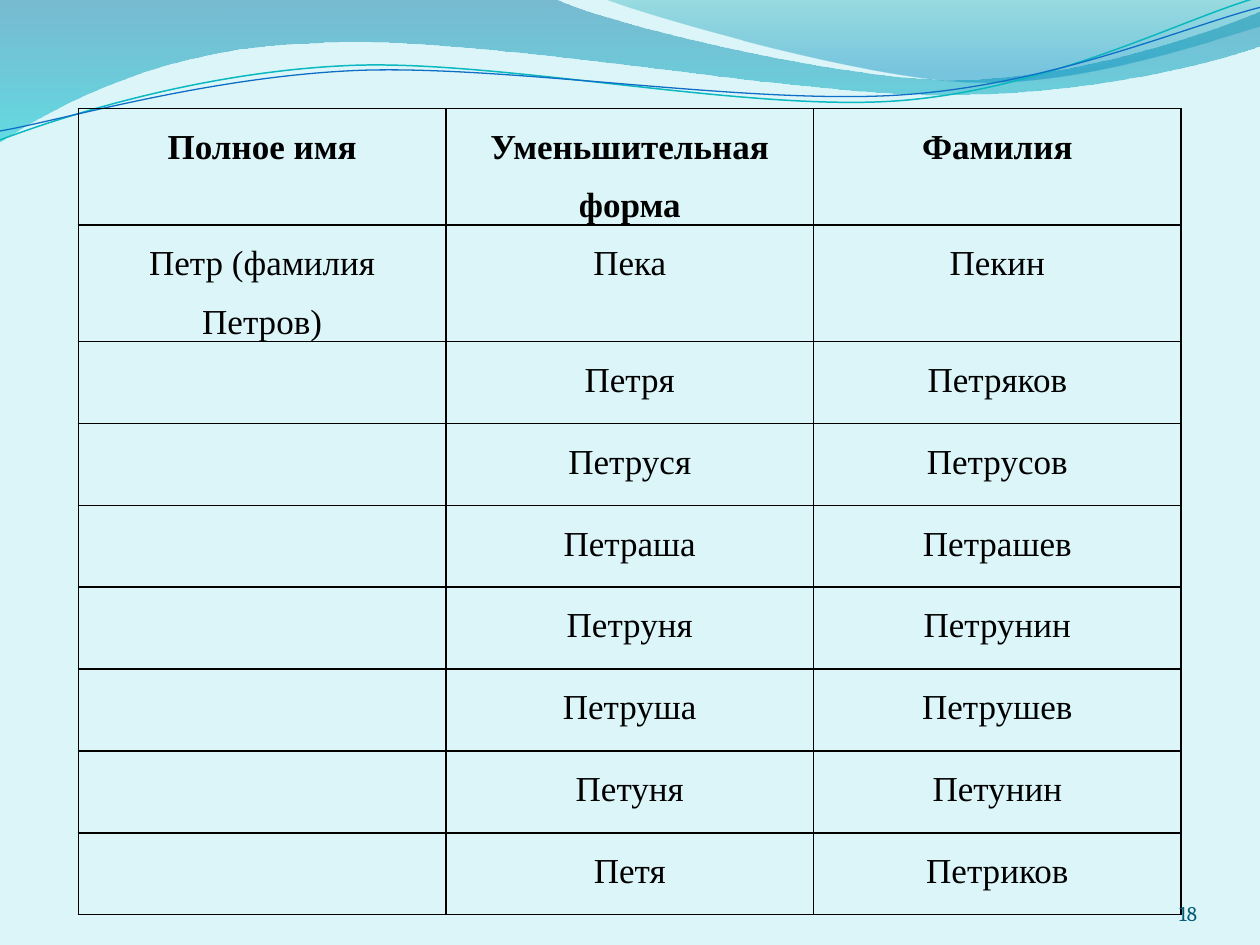
import math
from dataclasses import dataclass

from lxml import etree
from pptx import Presentation
from pptx import util as u
from pptx.dml.color import RGBColor
from pptx.enum import text as t
from pptx.oxml import ns


@dataclass(frozen=True)
class Theme:
    background: str = "DBF5F9"
    ink: str = "000000"
    number: str = "045D75"
    teal_line: str = "0AB8BF"
    blue_line: str = "0F6FC6"
    # Gradient stops: position, colour, opacity in percent
    broad_wave: tuple = ((0, "0074A1", 45), (1, "00C6CF", 55))
    corner_wave: tuple = ((0, "00A1A9", 30), (0.8, "008BBF", 45))
    table_font: str = "Times New Roman"
    number_font: str = "Cambria"
    table_size: int = 20
    number_size: int = 12


# Outlines in cm: one point is a straight step, three points are a cubic curve
BROAD_WAVE = [
    [(0, 0)], [(11.18, -0.03)],
    [(12.09, 0.43), (16.87, 1.6), (19.25, 1.6)],
    [(21.67, 1.6), (24.33, 0.66), (25.4, 0.23)],
    [(25.43, 0.91)],
    [(24.97, 1.12), (22.1, 1.93), (18.95, 1.91)],
    [(15.8, 1.91), (9.7, 0.71), (6.53, 0.86)],
    [(3.28, 0.91), (1.17, 2.11), (-0.03, 2.87)],
]
CORNER_WAVE = [
    [(12.17, -0.03)],
    [(12.93, 0.28), (17.32, 1.57), (19.53, 1.65)],
    [(21.74, 1.75), (24.41, 0.81), (25.4, 0.53)],
    [(25.4, 0)],
]
TEAL_CURVE = [
    [(0, 2.82)],
    [(1.22, 2.36), (4.01, 1.45), (7.04, 1.32)],
    [(10.03, 1.19), (15.06, 2.26), (18.11, 2.03)],
    [(21.16, 1.8), (23.83, 0.38), (25.35, -0.05)],
]
BLUE_CURVE = [
    [(0, 2.64)],
    [(1.19, 2.44), (4.17, 1.55), (7.19, 1.42)],
    [(10.24, 1.3), (15.16, 2.13), (18.21, 1.91)],
    [(21.23, 1.7), (23.9, 0.53), (25.4, 0.15)],
]
CURVE_TILT = -2.7
UNITS_PER_CM = 1000

NAMES = [
    ("Полное имя", "Уменьшительная форма", "Фамилия"),
    ("Петр (фамилия Петров)", "Пека", "Пекин"),
    ("", "Петря", "Петряков"),
    ("", "Петруся", "Петрусов"),
    ("", "Петраша", "Петрашев"),
    ("", "Петруня", "Петрунин"),
    ("", "Петруша", "Петрушев"),
    ("", "Петуня", "Петунин"),
    ("", "Петя", "Петриков"),
]


def turn(steps, center, degrees):
    """Turn every point clockwise about the center."""
    cos, sin = math.cos(math.radians(degrees)), math.sin(math.radians(degrees))
    cx, cy = center
    return [[(cx + (x - cx) * cos - (y - cy) * sin,
              cy + (x - cx) * sin + (y - cy) * cos) for x, y in step] for step in steps]


def write(frame, text, *, font, size, color, align, bold=False, spacing=None):
    paragraph = frame.paragraphs[0]
    paragraph.alignment = align
    paragraph.line_spacing = spacing
    run = paragraph.add_run()
    run.text = text
    run.font.name = font
    run.font.size = u.Pt(size)
    run.font.bold = bold
    run.font.color.rgb = RGBColor.from_string(color)


class SlideBuilder:
    def __init__(self, slide, theme):
        self.slide = slide
        self.theme = theme

    def background(self):
        fill = self.slide.background.fill
        fill.solid()
        fill.fore_color.rgb = RGBColor.from_string(self.theme.background)

    def outline(self, steps, closed):
        points = [(x * UNITS_PER_CM, y * UNITS_PER_CM) for step in steps for x, y in step]
        builder = self.slide.shapes.build_freeform(*points[0], scale=u.Cm(1) / UNITS_PER_CM)
        builder.add_line_segments(points[1:], close=closed)
        shape = builder.convert_to_shape()
        shape.shadow.inherit = False
        # Join each group of three line steps into one cubic curve
        lines = iter(list(shape._element.iter(ns.qn("a:lnTo"))))
        for step in steps[1:]:
            group = [next(lines) for _ in step]
            if len(group) == 3:
                cubic = etree.Element(ns.qn("a:cubicBezTo"))
                group[0].addprevious(cubic)
                for line in group:
                    cubic.append(line[0])
                    line.getparent().remove(line)
        return shape

    def wave(self, steps, stops):
        shape = self.outline(steps, closed=True)
        shape.line.fill.background()
        shape.fill.gradient()
        shape.fill.gradient_angle = 270
        for stop, (position, color, _) in zip(shape.fill.gradient_stops, stops):
            stop.position = position
            stop.color.rgb = RGBColor.from_string(color)
        # Opacity of each stop
        colors = shape._element.spPr.iter(ns.qn("a:srgbClr"))
        for color, (_, _, opacity) in zip(colors, stops):
            etree.SubElement(color, ns.qn("a:alpha"), val=str(opacity * 1000))

    def curve(self, steps, center, color, width):
        shape = self.outline(turn(steps, center, -CURVE_TILT), closed=False)
        shape.rotation = CURVE_TILT
        shape.fill.background()
        shape.line.color.rgb = RGBColor.from_string(color)
        shape.line.width = u.Pt(width)

    def border(self, cell):
        properties = cell._tc.get_or_add_tcPr()
        for index, side in enumerate(("lnL", "lnR", "lnT", "lnB")):
            line = etree.Element(ns.qn(f"a:{side}"), w=str(u.Pt(1)))
            fill = etree.SubElement(line, ns.qn("a:solidFill"))
            etree.SubElement(fill, ns.qn("a:srgbClr"), val=self.theme.ink)
            properties.insert(index, line)

    def table(self, rows, left, top, column_width, row_height, height):
        count = len(rows[0])
        frame = self.slide.shapes.add_table(
            len(rows), count, u.Cm(left), u.Cm(top), u.Cm(column_width * count), u.Cm(height))
        table = frame.table
        table.horz_banding = False
        for column in table.columns:
            column.width = u.Cm(column_width)
        for r, names in enumerate(rows):
            table.rows[r].height = u.Cm(row_height)
            for c, name in enumerate(names):
                cell = table.cell(r, c)
                cell.fill.background()
                cell.margin_left = cell.margin_right = u.Cm(0.18)
                cell.margin_top = cell.margin_bottom = 0
                self.border(cell)
                if name:
                    write(cell.text_frame, name, font=self.theme.table_font,
                          size=self.theme.table_size, color=self.theme.ink,
                          align=t.PP_ALIGN.CENTER, bold=r == 0, spacing=1.5)
        frame.height = u.Cm(height)

    def page_number(self, number, left, top, width, height):
        frame = self.slide.shapes.add_textbox(
            u.Cm(left), u.Cm(top), u.Cm(width), u.Cm(height)).text_frame
        frame.word_wrap = True
        frame.vertical_anchor = t.MSO_ANCHOR.BOTTOM
        frame.margin_left = frame.margin_right = frame.margin_top = frame.margin_bottom = 0
        write(frame, number, font=self.theme.number_font, size=self.theme.number_size,
              color=self.theme.number, align=t.PP_ALIGN.RIGHT)


def main():
    deck = Presentation()
    deck.slide_width, deck.slide_height = u.Cm(25.4), u.Cm(19.05)
    theme = Theme()
    page = SlideBuilder(deck.slides.add_slide(deck.slide_layouts[6]), theme)

    # Waves along the top edge
    page.background()
    page.wave(BROAD_WAVE, theme.broad_wave)
    page.wave(CORNER_WAVE, theme.corner_wave)
    page.curve(TEAL_CURVE, (12.67, 1.46), theme.teal_line, 0.85)
    page.curve(BLUE_CURVE, (12.69, 1.5), theme.blue_line, 0.75)

    # Names and the surnames formed from them
    page.table(NAMES, left=1.58, top=2.19, column_width=7.41, row_height=1.65, height=16.66)
    page.page_number("18", left=22.02, top=17.65, width=2.11, height=1.01)
    deck.save("out.pptx")


if __name__ == "__main__":
    main()
